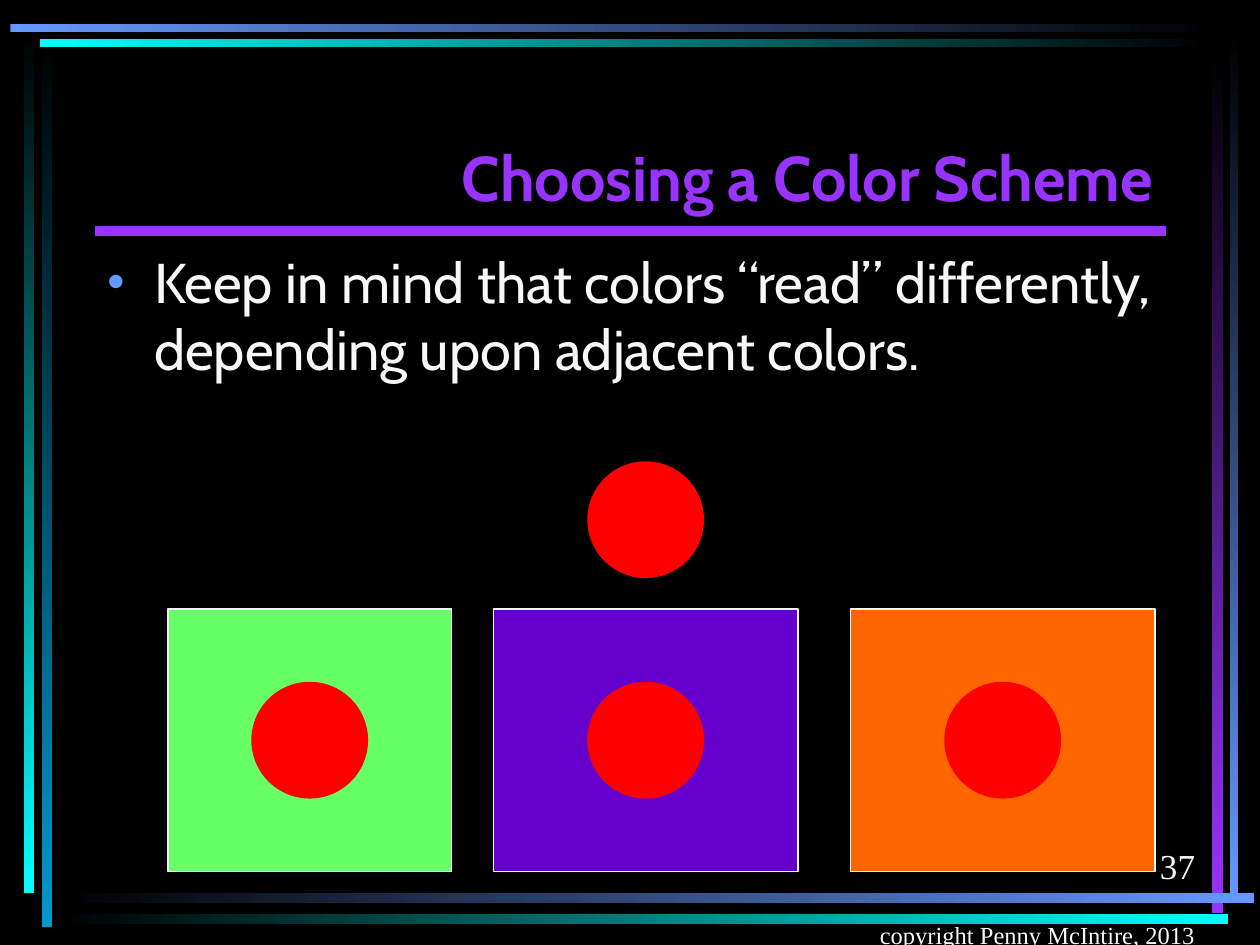
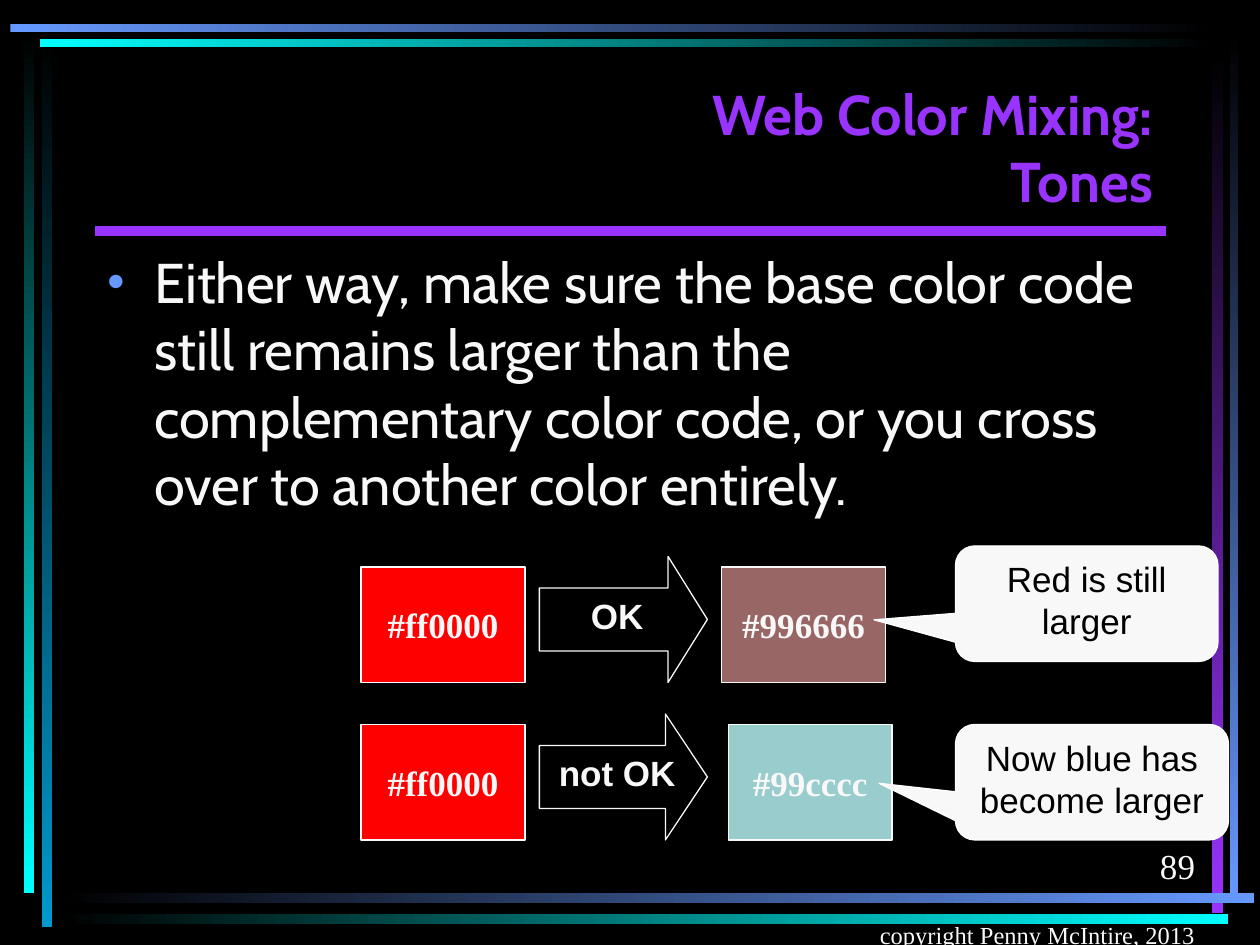
from lxml import etree
from pptx import Presentation
from pptx.dml.color import RGBColor
from pptx.enum.shapes import MSO_CONNECTOR, MSO_SHAPE
from pptx.enum.text import MSO_ANCHOR, MSO_AUTO_SIZE, PP_ALIGN
from pptx.oxml.ns import qn
from pptx.util import Pt

RECTANGLE = MSO_SHAPE.RECTANGLE
OVAL = MSO_SHAPE.OVAL
ARROW = MSO_SHAPE.RIGHT_ARROW
CALLOUT = MSO_SHAPE.ROUNDED_RECTANGULAR_CALLOUT
STRAIGHT = MSO_CONNECTOR.STRAIGHT
TOP, MIDDLE, BOTTOM = MSO_ANCHOR.TOP, MSO_ANCHOR.MIDDLE, MSO_ANCHOR.BOTTOM
LEFT, CENTER, RIGHT = PP_ALIGN.LEFT, PP_ALIGN.CENTER, PP_ALIGN.RIGHT
NO_AUTO_SIZE = MSO_AUTO_SIZE.NONE

BLACK, WHITE, OFF_WHITE = "000000", "FFFFFF", "F8F8F8"
PURPLE, BLUE, CYAN, TEAL, RED = "9933FF", "6699FF", "00FFFF", "0099CC", "FF0000"
HEADING_FONT, SERIF, SANS = "Cabin", "Times New Roman", "Arial"
COPYRIGHT = "copyright Penny McIntire, 2013"
TITLE_ONLY = 5
DOWN, ACROSS = 270, 0

# left, top, width, height, direction, first colour, last colour
FRAME_BARS = [
    (23.8, 20.2, 5.8, 509.8, DOWN, BLACK, TEAL),
    (13.7, 18, 5.8, 492.5, DOWN, BLACK, CYAN),
    (702.7, 17.3, 5, 499, DOWN, BLACK, BLUE),
    (692.6, 30.2, 6.2, 491.8, DOWN, BLACK, PURPLE),
    (32.4, 510, 684, 5.8, ACROSS, BLACK, BLUE),
    (32.4, 522, 669.6, 5.8, ACROSS, BLACK, CYAN),
    (23, 22.3, 671, 4.5, ACROSS, CYAN, BLACK),
    (6, 13.5, 688.3, 5, ACROSS, BLUE, BLACK),
]


def color(hex_code):
    return RGBColor.from_string(hex_code)


def points(box):
    return [Pt(length) for length in box]


class Deck:
    """Holds the shared style and the slide being built."""

    def __init__(self):
        self.presentation = Presentation()
        self.presentation.slide_width = Pt(720)
        self.presentation.slide_height = Pt(540)
        background = self.presentation.slide_master.background.fill
        background.solid()
        background.fore_color.rgb = color(BLACK)
        self.slide = None

    def start_slide(self, title, title_size, number):
        """Add a slide with its frame, title, rule and footer."""
        layout = self.presentation.slide_layouts[TITLE_ONLY]
        self.slide = self.presentation.slides.add_slide(layout)
        for bar in FRAME_BARS:
            self.gradient_bar(*bar)
        self.rule(54, 132, 666)
        self.label((540, 474, 150, 36), number, 20, SERIF, align=RIGHT, anchor=BOTTOM)
        self.label((462, 510, 228, 36), COPYRIGHT, 14, SERIF, align=RIGHT, anchor=BOTTOM)
        heading = self.slide.shapes.title
        heading.left, heading.top, heading.width, heading.height = points((54, 36, 612, 90))
        self.set_text(heading, title, title_size, HEADING_FONT, PURPLE, True, RIGHT, BOTTOM)

    def set_text(self, shape, text, size, font, text_color=OFF_WHITE, bold=False,
                 align=CENTER, anchor=TOP, wrap=True):
        frame = shape.text_frame
        frame.text = text
        frame.auto_size = NO_AUTO_SIZE
        frame.word_wrap = wrap
        frame.vertical_anchor = anchor
        for paragraph in frame.paragraphs:
            paragraph.alignment = align
            for run in paragraph.runs:
                run.font.name = font
                run.font.size = Pt(size)
                run.font.bold = bold
                run.font.color.rgb = color(text_color)

    def label(self, box, text, size, font, **style):
        text_box = self.slide.shapes.add_textbox(*points(box))
        self.set_text(text_box, text, size, font, **style)
        return text_box

    def bullet(self, box, text):
        text_box = self.label(box, text, 32, HEADING_FONT, align=LEFT)
        paragraph = text_box.text_frame.paragraphs[0]
        paragraph.space_before = Pt(6.4)
        properties = paragraph._p.get_or_add_pPr()
        properties.set("marL", str(Pt(27)))
        properties.set("indent", str(Pt(-27)))
        bullet_color = etree.SubElement(properties, qn("a:buClr"))
        etree.SubElement(bullet_color, qn("a:srgbClr"), val=BLUE)
        etree.SubElement(properties, qn("a:buFont"), typeface=SERIF)
        etree.SubElement(properties, qn("a:buChar"), char="•")

    def shape(self, kind, box, fill=None, line=OFF_WHITE, adjustments=()):
        shape = self.slide.shapes.add_shape(kind, *points(box))
        shape.shadow.inherit = False
        for index, value in enumerate(adjustments):
            shape.adjustments[index] = value
        if fill:
            shape.fill.solid()
            shape.fill.fore_color.rgb = color(fill)
        else:
            shape.fill.background()
        if line:
            shape.line.color.rgb = color(line)
            shape.line.width = Pt(0.75)
        else:
            shape.line.fill.background()
        return shape

    def gradient_bar(self, left, top, width, height, direction, first, last):
        bar = self.shape(RECTANGLE, (left, top, width, height), line=None)
        bar.fill.gradient()
        bar.fill.gradient_angle = direction
        for stop, stop_color in zip(bar.fill.gradient_stops, (first, last)):
            stop.color.rgb = color(stop_color)

    def rule(self, left, top, right):
        line = self.slide.shapes.add_connector(STRAIGHT, *points((left, top, right, top)))
        line.line.color.rgb = color(PURPLE)
        line.line.width = Pt(6)
        etree.SubElement(line._element.spPr, qn("a:effectLst"))

    def circle(self, center, top):
        diameter = 66
        self.shape(OVAL, (center - diameter / 2, top, diameter, diameter), RED, RED)

    def swatch(self, left, top, fill, code):
        swatch = self.shape(RECTANGLE, (left, top, 93.6, 66), fill)
        self.set_text(swatch, code, 20, SERIF, bold=True, anchor=MIDDLE, wrap=False)

    def arrow(self, top, text, head):
        self.shape(ARROW, (308.2, top, 96, 72), adjustments=(0.5, head))
        self.label((308.2, top + 18, 89, 31), text, 20, SANS, bold=True)

    def callout(self, top, width, text, tip):
        callout = self.shape(CALLOUT, (546, top, width, 66), OFF_WHITE, WHITE, (*tip, 0.167))
        self.set_text(callout, text, 20, SANS, BLACK)


def build_color_scheme(deck):
    deck.start_slide("Choosing a Color Scheme", 36, "37")
    deck.bullet((54, 138, 612, 384),
                "Keep in mind that colors “read” differently, depending upon adjacent colors.")
    panels = [(96, 162, "66FF66"), (282, 174, "6600CC"), (486, 174, "FF6600")]
    for left, width, fill in panels:
        deck.shape(RECTANGLE, (left, 348, width, 150), fill)
        deck.circle(left + width / 2, 390)
    deck.circle(369, 264)


def build_tones(deck):
    deck.start_slide("Web Color Mixing:\nTones", 32, "89")
    deck.bullet((54, 138, 618, 168),
                "Either way, make sure the base color code still remains larger than the "
                "complementary color code, or you cross over to another color entirely.")
    mixes = [
        ("OK", 0.312, 412.4, "996666", 312, 150, "Red is still larger", (-0.81, 0.14)),
        ("not OK", 0.333, 416.2, "99CCCC", 414, 156, "Now blue has become larger",
         (-0.78, 0.01)),
    ]
    for row, (verdict, head, left, result, note_top, note_width, note, tip) in enumerate(mixes):
        top = 324 + 90 * row
        deck.swatch(206.4, top, RED, "#ff0000")
        deck.arrow(top - 6, verdict, head)
        deck.swatch(left, top, result, "#" + result.lower())
        deck.callout(note_top, note_width, note, tip)


def main():
    deck = Deck()
    build_color_scheme(deck)
    build_tones(deck)
    deck.presentation.save("out.pptx")


if __name__ == "__main__":
    main()
